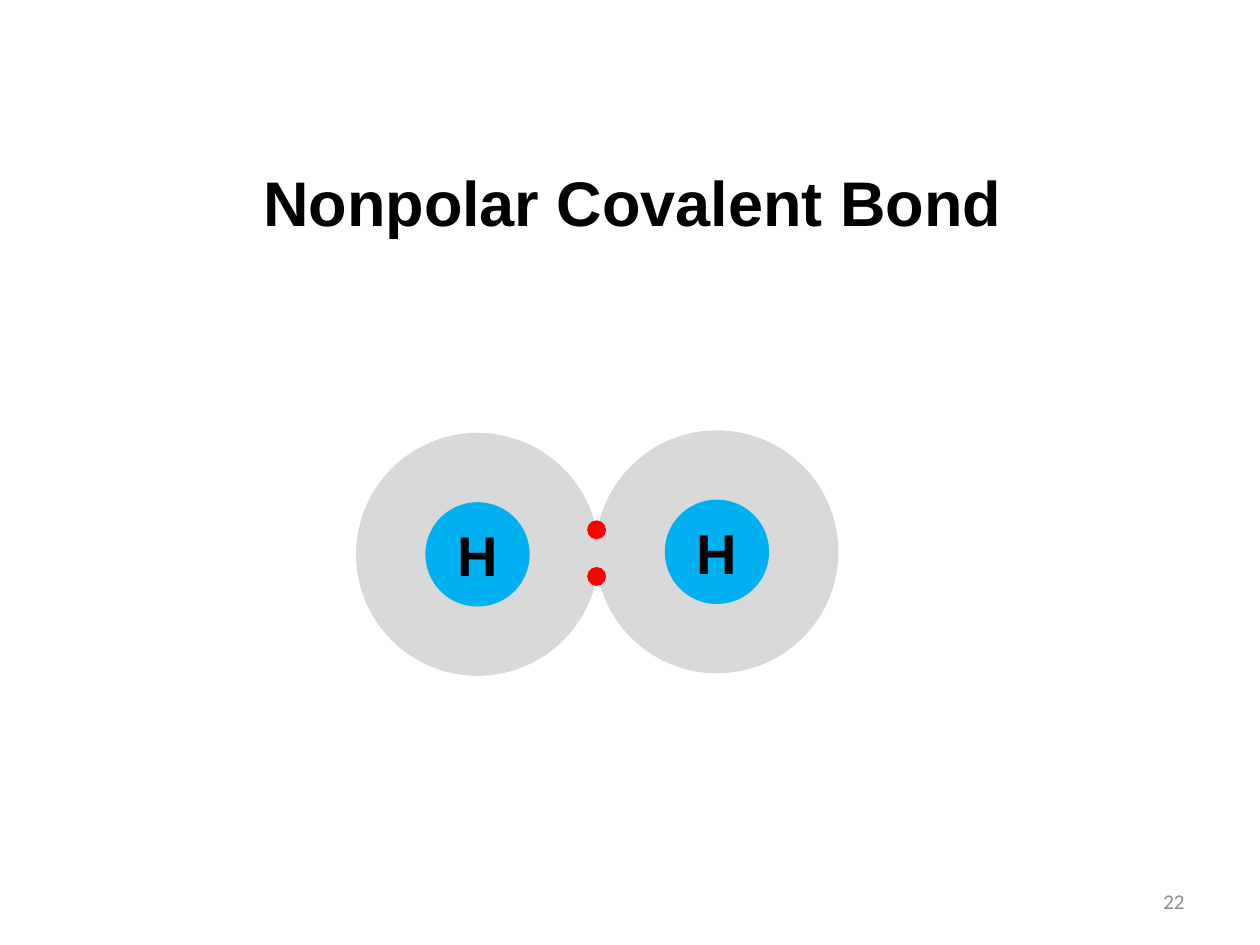
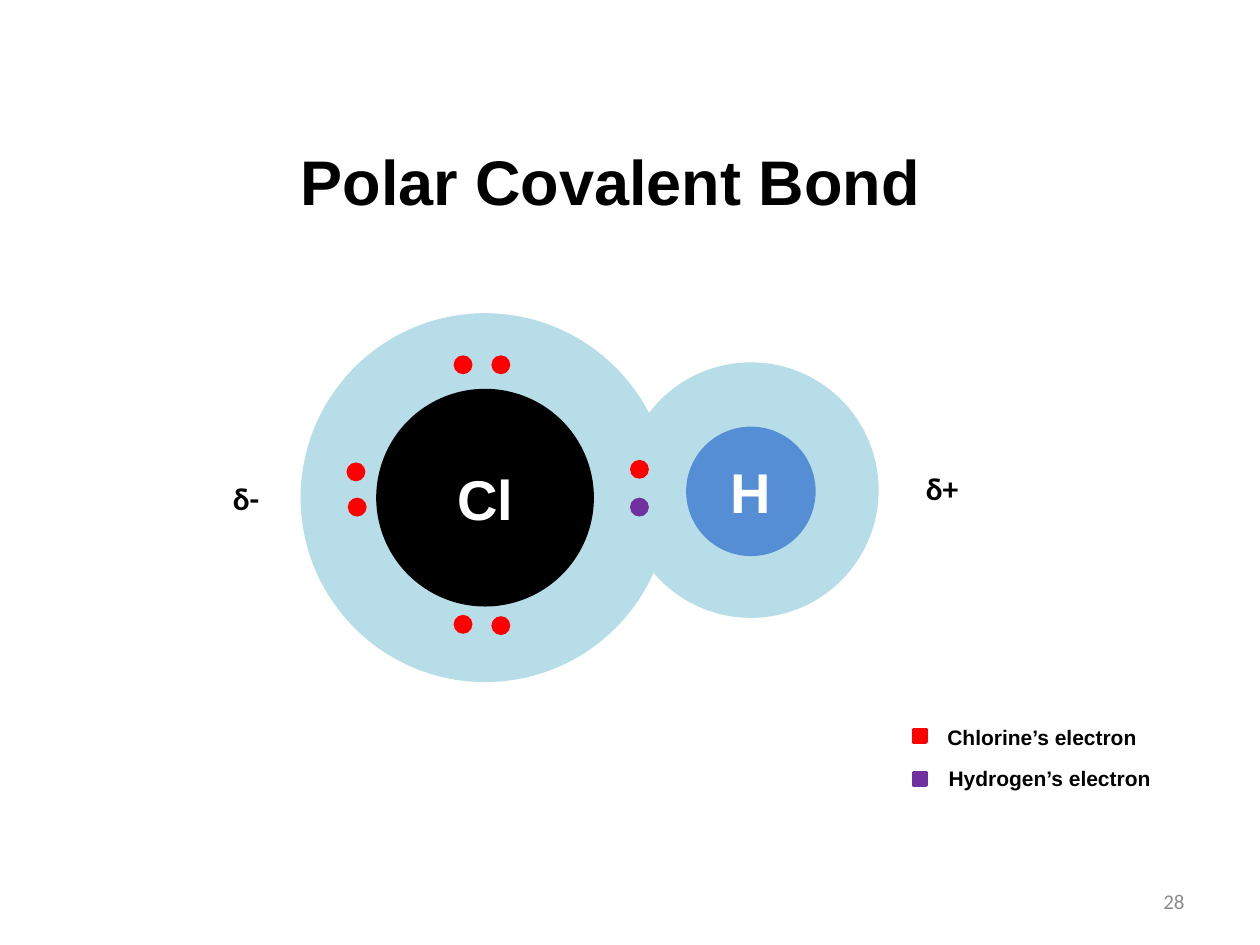
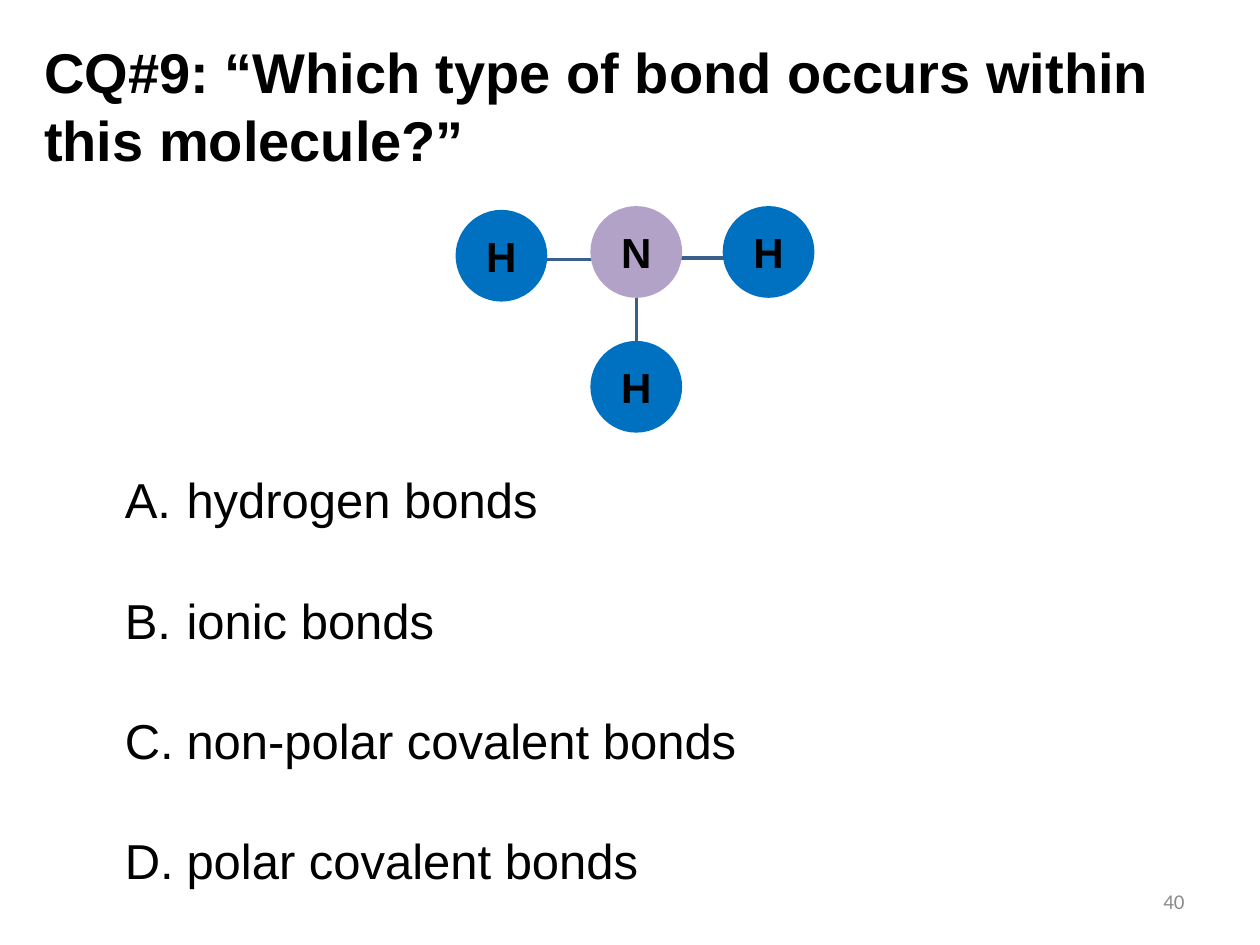
from lxml import etree
from pptx import Presentation
from pptx import util as u
from pptx.dml.color import RGBColor
from pptx.enum import shapes, text
from pptx.oxml import ns

BLACK, WHITE, GREY = "000000", "FFFFFF", "8C8C8C"
RED, PURPLE = "FF0000", "7030A0"
SHELL_GREY, SHELL_BLUE = "D9D9D9", "B7DEE8"
OVAL, SQUARE = shapes.MSO_SHAPE.OVAL, shapes.MSO_SHAPE.RECTANGLE
LEFT, CENTER, RIGHT = text.PP_ALIGN.LEFT, text.PP_ALIGN.CENTER, text.PP_ALIGN.RIGHT
TOP, MIDDLE = text.MSO_ANCHOR.TOP, text.MSO_ANCHOR.MIDDLE
ELECTRON = 0.15


def write(shape, content, box=None, size=12, font="Arial", color=BLACK, bold=True,
          align=LEFT, anchor=TOP, wrap=False, gap=0):
    """Fill a shape with one paragraph per line, after moving it to box if given."""
    if box:
        shape.left, shape.top, shape.width, shape.height = map(u.Inches, box)
    frame = shape.text_frame
    frame.text = content
    frame.auto_size = text.MSO_AUTO_SIZE.NONE
    frame.word_wrap = wrap
    frame.vertical_anchor = anchor
    for index, paragraph in enumerate(frame.paragraphs):
        paragraph.alignment = align
        paragraph.space_before = u.Pt(gap if index else 0)
        paragraph.font.size = u.Pt(size)
        paragraph.font.name = font
        paragraph.font.bold = bold
        paragraph.font.color.rgb = RGBColor.from_string(color)


def add_mark(slide, kind, left, top, size, color, outlined=True):
    """Add a circle or square of one colour."""
    mark = slide.shapes.add_shape(kind, *map(u.Inches, (left, top, size, size)))
    mark.shadow.inherit = False
    mark.fill.solid()
    mark.fill.fore_color.rgb = RGBColor.from_string(color)
    if outlined:
        mark.line.color.rgb = RGBColor.from_string(color)
        mark.line.width = u.Pt(2)
    else:
        mark.line.fill.background()
    return mark


presentation = Presentation()
presentation.slide_width, presentation.slide_height = u.Inches(10), u.Inches(7.5)

# Titles and slide numbers
slides = []
for layout, number, title, box, style in (
    (5, "22", "Nonpolar Covalent Bond", (1.96, 1.25, 6.12, 0.71),
     dict(size=36, align=CENTER)),
    (5, "28", "Polar Covalent Bond", (2.26, 1.08, 5.17, 0.71),
     dict(size=36, align=CENTER)),
    (1, "40", "CQ#9: “Which type of bond occurs within this molecule?”",
     (0.25, 0.25, 9.5, 1.18), dict(size=32, wrap=True)),
):
    slide = presentation.slides.add_slide(presentation.slide_layouts[layout])
    write(slide.shapes.title, title, box, **style)
    number_box = slide.shapes.add_textbox(0, 0, 0, 0)
    write(number_box, number, (7.17, 6.95, 2.33, 0.4), font="Calibri", color=GREY,
          bold=False, align=RIGHT, anchor=MIDDLE, wrap=True)
    slides.append(slide)
nonpolar, polar, question = slides

# Two hydrogen atoms sharing a pair of electrons
hydrogens = ((2.84, 3.45), (4.74, 3.43))
for left, top in hydrogens:
    add_mark(nonpolar, OVAL, left, top, 1.9, SHELL_GREY)
for top in (4.13, 4.5):
    add_mark(nonpolar, OVAL, 4.66, top, ELECTRON, RED, outlined=False)
for left, top in hydrogens:
    nucleus = add_mark(nonpolar, OVAL, left + 0.55, top + 0.55, 0.8, "00B0F0")
    write(nucleus, "H", size=32, align=CENTER, anchor=MIDDLE)

# Hydrogen chloride with its partial charges
add_mark(polar, OVAL, 2.4, 2.5, 2.9, SHELL_BLUE)
add_mark(polar, OVAL, 4.96, 2.89, 2, SHELL_BLUE)
for symbol, left, top, size, color in (
    ("Cl", 3, 3.1, 1.7, BLACK),
    ("H", 5.46, 3.4, 1, "558ED5"),
):
    nucleus = add_mark(polar, OVAL, left, top, size, color)
    write(nucleus, symbol, size=32, color=WHITE, align=CENTER, anchor=MIDDLE)

chlorine_electrons = ((3.6, 2.82), (3.9, 2.82), (2.75, 3.67), (2.76, 3.95),
                      (3.6, 4.88), (3.9, 4.89), (5, 3.65))
for left, top in chlorine_electrons:
    add_mark(polar, OVAL, left, top, ELECTRON, RED, outlined=False)
add_mark(polar, OVAL, 5, 3.95, ELECTRON, PURPLE, outlined=False)

for top, color in ((5.79, RED), (6.13, PURPLE)):
    add_mark(polar, SQUARE, 7.25, top, 0.1, color)
for label, box, style in (
    ("Chlorine’s electron", (7.42, 5.7, 1.72, 0.3), {}),
    ("Hydrogen’s electron", (7.43, 6.03, 1.82, 0.3), {}),
    ("δ-", (1.75, 3.75, 0.5, 0.4), dict(size=18, font="Calibri")),
    ("δ+", (7.25, 3.67, 0.46, 0.4), dict(size=18, font="Calibri")),
):
    write(polar.shapes.add_textbox(0, 0, 0, 0), label, box, **style)

# Ammonia molecule: bonds behind, atoms in front
for ends in ((5.05, 2.35, 5.05, 2.75), (5.4, 2.05, 5.8, 2.05), (4.33, 2.06, 4.73, 2.06)):
    bond = question.shapes.add_connector(shapes.MSO_CONNECTOR.STRAIGHT, *map(u.Inches, ends))
    bond.line.color.rgb = RGBColor.from_string("3A5F8C")
    bond.line.width = u.Pt(2)
    etree.SubElement(bond._element.spPr, ns.qn("a:effectLst"))

for symbol, left, top, color in (
    ("H", 3.63, 1.68, "0070C0"),
    ("H", 4.7, 2.72, "0070C0"),
    ("H", 5.75, 1.65, "0070C0"),
    ("N", 4.7, 1.65, "B3A2C7"),
):
    atom = add_mark(question, OVAL, left, top, 0.7, color)
    write(atom, symbol, size=24, align=CENTER, anchor=MIDDLE)

# Lettered answers
answers = question.placeholders[1]
write(answers, "hydrogen bonds\nionic bonds\nnon-polar covalent bonds\npolar covalent bonds",
      (0.89, 3.68, 5.12, 3.4), size=28, bold=False, gap=35)
for paragraph in answers.text_frame.paragraphs:
    properties = paragraph._p.get_or_add_pPr()
    properties.set("marL", str(u.Inches(0.49)))
    properties.set("indent", str(-u.Inches(0.49)))
    numbering = etree.Element(ns.qn("a:buAutoNum"), type="alphaUcPeriod")
    properties.find(ns.qn("a:spcBef")).addnext(numbering)

presentation.save("out.pptx")
